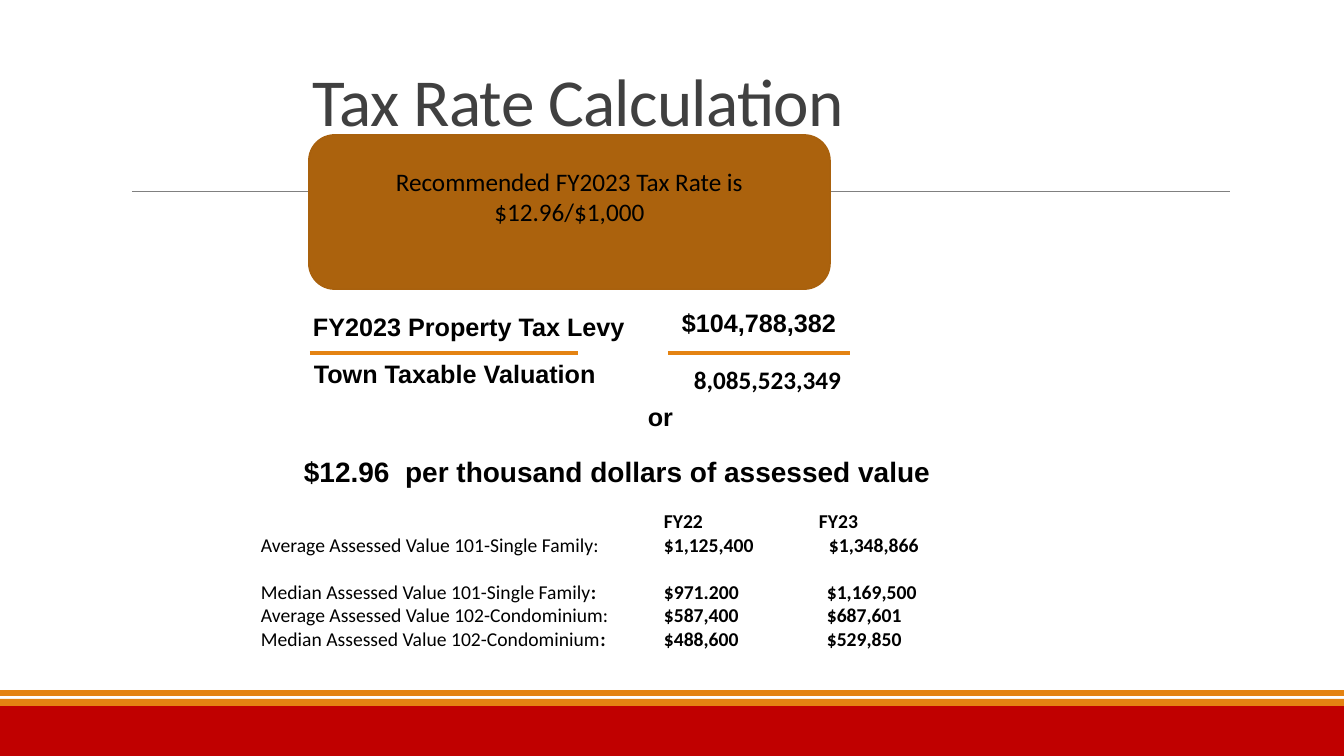
import pptx
import pptx.dml.color
import pptx.enum.shapes
import pptx.enum.text
import pptx.oxml
import pptx.oxml.ns
import pptx.util
from lxml import etree

RGBColor = pptx.dml.color.RGBColor
SHAPE = pptx.enum.shapes.MSO_SHAPE
ANCHOR = pptx.enum.text.MSO_ANCHOR
ALIGN = pptx.enum.text.PP_ALIGN

WHITE = RGBColor(0xFF, 0xFF, 0xFF)
BLACK = RGBColor(0x00, 0x00, 0x00)
TITLE_GRAY = RGBColor(0x40, 0x40, 0x40)
RULE_GRAY = RGBColor(0x80, 0x80, 0x80)
RED = RGBColor(0xC0, 0x00, 0x00)
ORANGE = RGBColor(0xE4, 0x83, 0x12)
BROWN = RGBColor(0xAB, 0x62, 0x0D)
BROWN_EDGE = RGBColor(0xA9, 0x61, 0x0D)

PX = 914400 / 100.8
WIDTH, HEIGHT = 1344, 756


def emu(*lengths):
    return [round(length * PX) for length in lengths]


def add_span(para, text, font="Calibri", size=18, bold=False, color=BLACK, spacing=0):
    span = para.add_run()
    span.text = text
    span.font.name = font
    span.font.size = pptx.util.Pt(size)
    span.font.bold = bold
    span.font.color.rgb = color
    if spacing:
        span._r.get_or_add_rPr().set("spc", str(round(spacing * 100)))


class SlideBuilder:
    def __init__(self, deck):
        self.page = deck.slides.add_slide(deck.slide_layouts[6])
        self.page.background.fill.solid()
        self.page.background.fill.fore_color.rgb = WHITE

    def shape(self, kind, left, top, width, height, fill, edge=None):
        box = self.page.shapes.add_shape(kind, *emu(left, top, width, height))
        box.shadow.inherit = False
        box.fill.solid()
        box.fill.fore_color.rgb = fill
        if edge:
            box.line.color.rgb = edge
            box.line.width = pptx.util.Pt(1.25)
        else:
            box.line.fill.background()
        return box

    def rule(self, left, right, top, color, weight):
        line = self.page.shapes.add_connector(
            pptx.enum.shapes.MSO_CONNECTOR.STRAIGHT, *emu(left, top, right, top))
        line.line.color.rgb = color
        line.line.width = pptx.util.Pt(weight)
        etree.SubElement(line._element.spPr, pptx.oxml.ns.qn("a:effectLst"))

    def frame(self, left, top, width, height):
        box = self.page.shapes.add_textbox(*emu(left, top, width, height))
        box.text_frame.word_wrap = True
        return box.text_frame

    def text(self, text, left, top, width, height, anchor=ANCHOR.TOP,
             line_spacing=None, **style):
        frame = self.frame(left, top, width, height)
        frame.vertical_anchor = anchor
        para = frame.paragraphs[0]
        para.line_spacing = line_spacing
        add_span(para, text, **style)

    def tab_stops(self, para, stops):
        tabs = etree.SubElement(para._p.get_or_add_pPr(), pptx.oxml.ns.qn("a:tabLst"))
        for stop in emu(*stops):
            etree.SubElement(tabs, pptx.oxml.ns.qn("a:tab"), pos=str(stop), algn="l")


def main():
    deck = pptx.Presentation()
    deck.slide_width, deck.slide_height = emu(WIDTH, HEIGHT)
    slide = SlideBuilder(deck)

    # Footer bands and title rule
    for top, height, color in ((706, 50, RED), (699, 7, ORANGE), (690, 6, ORANGE)):
        slide.shape(SHAPE.RECTANGLE, 0, top, WIDTH, height, color)
    slide.rule(132, 1230, 191, RULE_GRAY, 0.5)

    # Title
    slide.text("Tax Rate Calculation", 303, 10, 637, 135, anchor=ANCHOR.BOTTOM,
               line_spacing=0.85, size=48, color=TITLE_GRAY, spacing=-0.5)

    # Levy divided by valuation
    label = {"font": "Arial", "bold": True}
    slide.text("FY2023 Property Tax Levy", 303, 306, 345, 40, **label)
    slide.text("Town Taxable Valuation", 304, 353, 315, 40, **label)
    slide.text("$104,788,382", 672, 306, 184, 37, line_spacing=0.9, **label)
    slide.text("8,085,523,349", 684, 359, 172, 40, bold=True)
    for left, right in ((310, 578), (668, 850)):
        slide.rule(left, right, 353, ORANGE, 3)

    # Resulting rate
    slide.text("or", 638, 396, 60, 40, **label)
    slide.text("$12.96  per thousand dollars of assessed value",
               294, 450, 781, 44, size=20, **label)

    # Recommendation box
    box = slide.shape(SHAPE.ROUNDED_RECTANGLE, 309, 135, 521, 154, BROWN, BROWN_EDGE)
    frame = box.text_frame
    frame.word_wrap = True
    frame.vertical_anchor = ANCHOR.MIDDLE
    frame.margin_left, frame.margin_right, frame.margin_bottom = emu(50, 50, 36)
    frame.paragraphs[0].alignment = ALIGN.CENTER
    add_span(frame.paragraphs[0], "Recommended FY2023 Tax Rate is $12.96/$1,000")

    # Assessed values: plain label, bold colon or values, second tab stop, space after
    rows = (
        ("", "\tFY22\tFY23", 558, 0),
        ("Average Assessed Value 101-Single Family:", "\t$1,125,400\t$1,348,866", 568, 17),
        ("Median Assessed Value 101-Single Family", ":\t$971.200\t$1,169,500", 566, 0),
        ("Average Assessed Value 102-Condominium:", "\t$587,400\t$687,601", 566, 0),
        ("Median Assessed Value 102-Condominium", ":\t$488,600\t$529,850", 566, 0),
    )
    frame = slide.frame(251, 504, 814, 150)
    for index, (name, values, second_stop, gap) in enumerate(rows):
        para = frame.add_paragraph() if index else frame.paragraphs[0]
        para.space_after = pptx.util.Pt(gap)
        slide.tab_stops(para, (403, second_stop))
        if name:
            add_span(para, name, size=14)
        add_span(para, values, size=14, bold=True)

    deck.save("out.pptx")


if __name__ == "__main__":
    main()
